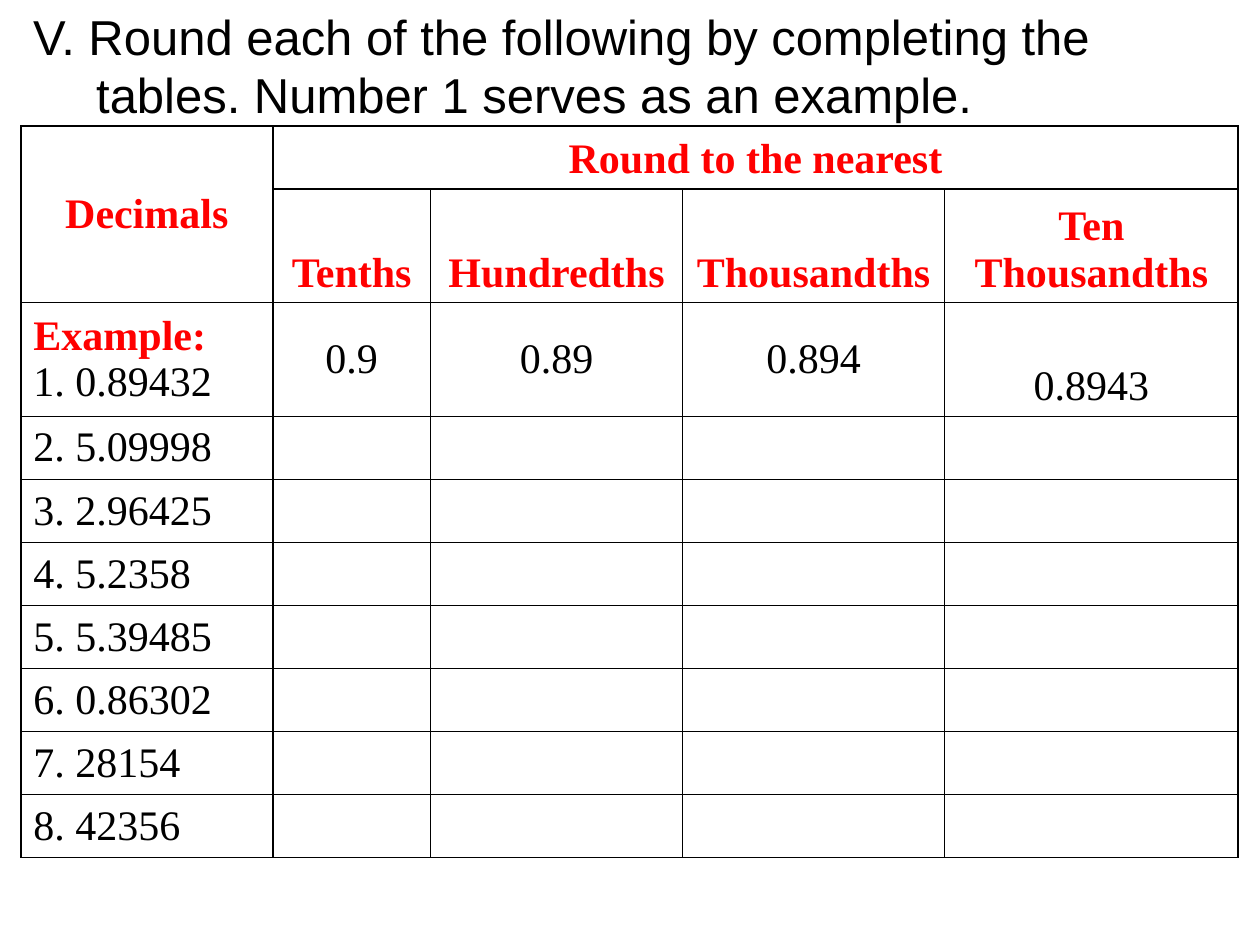
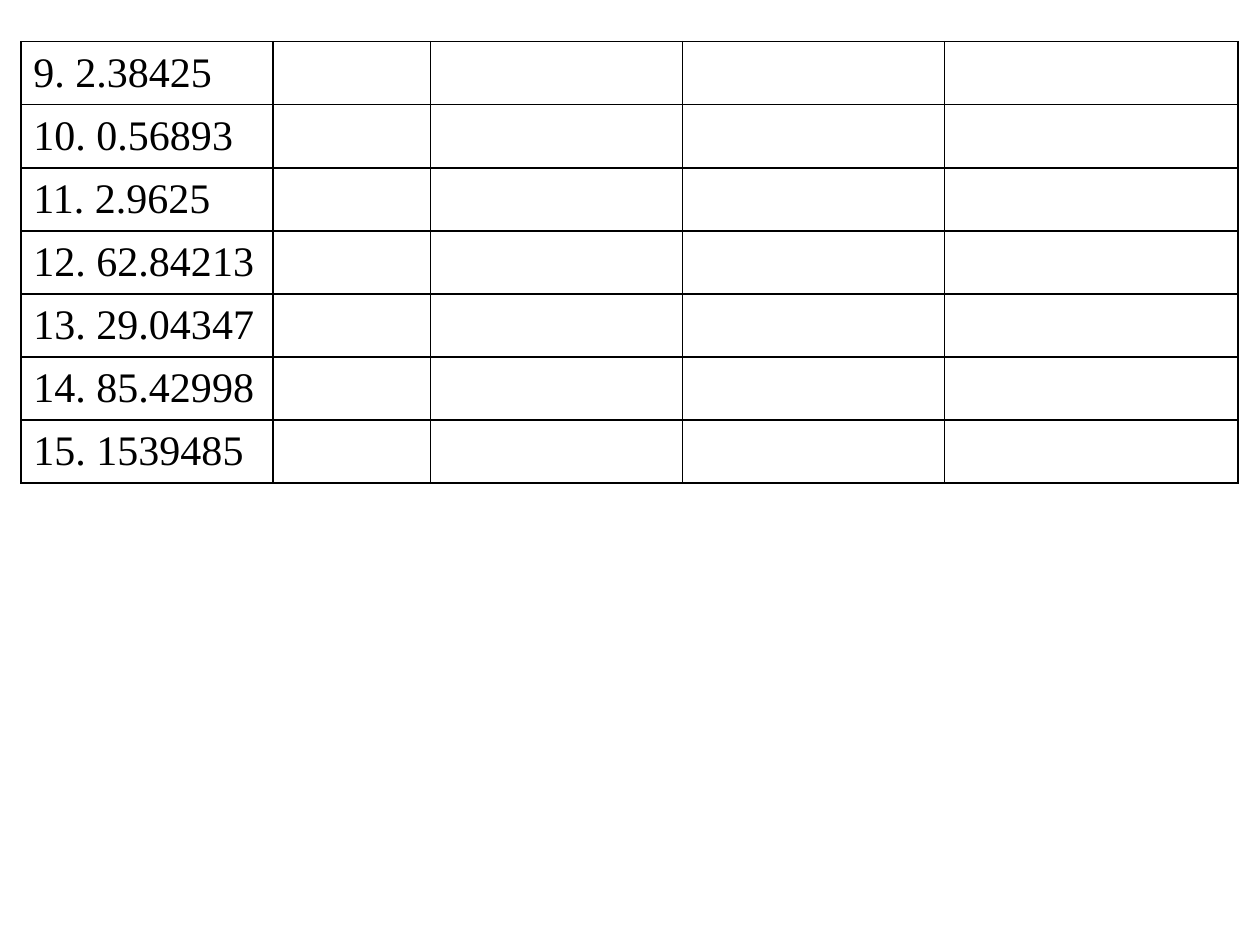
from dataclasses import dataclass

from lxml.etree import SubElement
from pptx import Presentation
from pptx.dml.color import RGBColor as RGB
from pptx.enum.text import MSO_ANCHOR as Anchor, PP_ALIGN as Align
from pptx.oxml.ns import qn
from pptx.util import Cm, Pt


@dataclass(frozen=True)
class Theme:
    ink: str = "000000"
    accent: str = "FF0000"
    title_font: str = "Arial"
    table_font: str = "Times New Roman"
    title_size: int = 28
    table_size: int = 24
    border: int = 1


theme = Theme()
COLUMN_WIDTHS = [5.08, 3.18, 5.08, 5.28, 5.92]
TABLE_LEFT = 0.42
ROW, TALL_ROW = 1.27, 2.29


def add_grid(slide, top, row_heights):
    """Add a table with plain black borders and no fill."""
    frame = slide.shapes.add_table(
        len(row_heights), len(COLUMN_WIDTHS), Cm(TABLE_LEFT), Cm(top),
        Cm(sum(COLUMN_WIDTHS)), Cm(sum(row_heights)))
    table = frame.table
    table.first_row = table.horz_banding = False
    for column, width in zip(table.columns, COLUMN_WIDTHS):
        column.width = Cm(width)
    for row, height in zip(table.rows, row_heights):
        row.height = Cm(height)
    for cell in table.iter_cells():
        properties = cell._tc.get_or_add_tcPr()
        for side in ("a:lnL", "a:lnR", "a:lnT", "a:lnB"):
            line = SubElement(properties, qn(side), w=str(Pt(theme.border)))
            fill = SubElement(line, qn("a:solidFill"))
            SubElement(fill, qn("a:srgbClr"), val=theme.ink)
        cell.fill.background()
    return table


def write_cell(cell, text, align=Align.LEFT, anchor=Anchor.MIDDLE, heading=False):
    cell.text_frame.text = text
    cell.vertical_anchor = anchor
    for paragraph in cell.text_frame.paragraphs:
        paragraph.alignment = align
        for run in paragraph.runs:
            run.font.name = theme.table_font
            run.font.size = Pt(theme.table_size)
            run.font.bold = heading
            run.font.color.rgb = RGB.from_string(theme.accent if heading else theme.ink)


presentation = Presentation()
presentation.slide_width, presentation.slide_height = Cm(25.4), Cm(19.05)
blank = presentation.slide_layouts[6]

# Slide 1: instruction with a hanging indent
slide = presentation.slides.add_slide(blank)
title = slide.shapes.add_textbox(Cm(TABLE_LEFT), Cm(0), Cm(24.33), Cm(2.62))
title.text_frame.word_wrap = True
title.text_frame.text = ("V. Round each of the following by completing the tables. "
                         "Number 1 serves as an example.")
paragraph = title.text_frame.paragraphs[0]
paragraph.space_before = Pt(2)
indents = paragraph._p.get_or_add_pPr()
indents.set("marL", str(Cm(1.27)))
indents.set("indent", str(Cm(-1.27)))
font = paragraph.runs[0].font
font.name, font.size = theme.title_font, Pt(theme.title_size)
font.color.rgb = RGB.from_string(theme.ink)

# Slide 1: table headings
decimals = ["2. 5.09998", "3. 2.96425", "4. 5.2358", "5. 5.39485",
            "6. 0.86302", "7. 28154", "8. 42356"]
table = add_grid(slide, 2.54, [ROW, TALL_ROW, TALL_ROW] + [ROW] * len(decimals))
table.cell(0, 0).merge(table.cell(1, 0))
table.cell(0, 1).merge(table.cell(0, 4))
write_cell(table.cell(0, 0), "Decimals", Align.CENTER, heading=True)
write_cell(table.cell(0, 1), "Round to the nearest", Align.CENTER, Anchor.BOTTOM, True)
places = ["Tenths", "Hundredths", "Thousandths", "Ten Thousandths"]
for column, place in enumerate(places, 1):
    write_cell(table.cell(1, column), place, Align.CENTER, Anchor.BOTTOM, True)

# Slide 1: worked example
example = table.cell(2, 0)
write_cell(example, "Example:\n1. 0.89432")
example_font = example.text_frame.paragraphs[0].runs[0].font
example_font.bold = True
example_font.color.rgb = RGB.from_string(theme.accent)
for column, answer in enumerate(["0.9", "0.89", "0.894", "0.8943"], 1):
    anchor = Anchor.BOTTOM if column == len(places) else Anchor.MIDDLE
    write_cell(table.cell(2, column), answer, Align.CENTER, anchor)

# Slide 1: exercises
for row, decimal in enumerate(decimals, 3):
    write_cell(table.cell(row, 0), decimal)

# Slide 2: remaining exercises
slide = presentation.slides.add_slide(blank)
decimals = ["9. 2.38425", "10. 0.56893", "11. 2.9625", "12. 62.84213",
            "13. 29.04347", "14. 85.42998", "15. 1539485"]
table = add_grid(slide, 0.84, [ROW] * len(decimals))
for row, decimal in enumerate(decimals):
    write_cell(table.cell(row, 0), decimal)

presentation.save("out.pptx")
